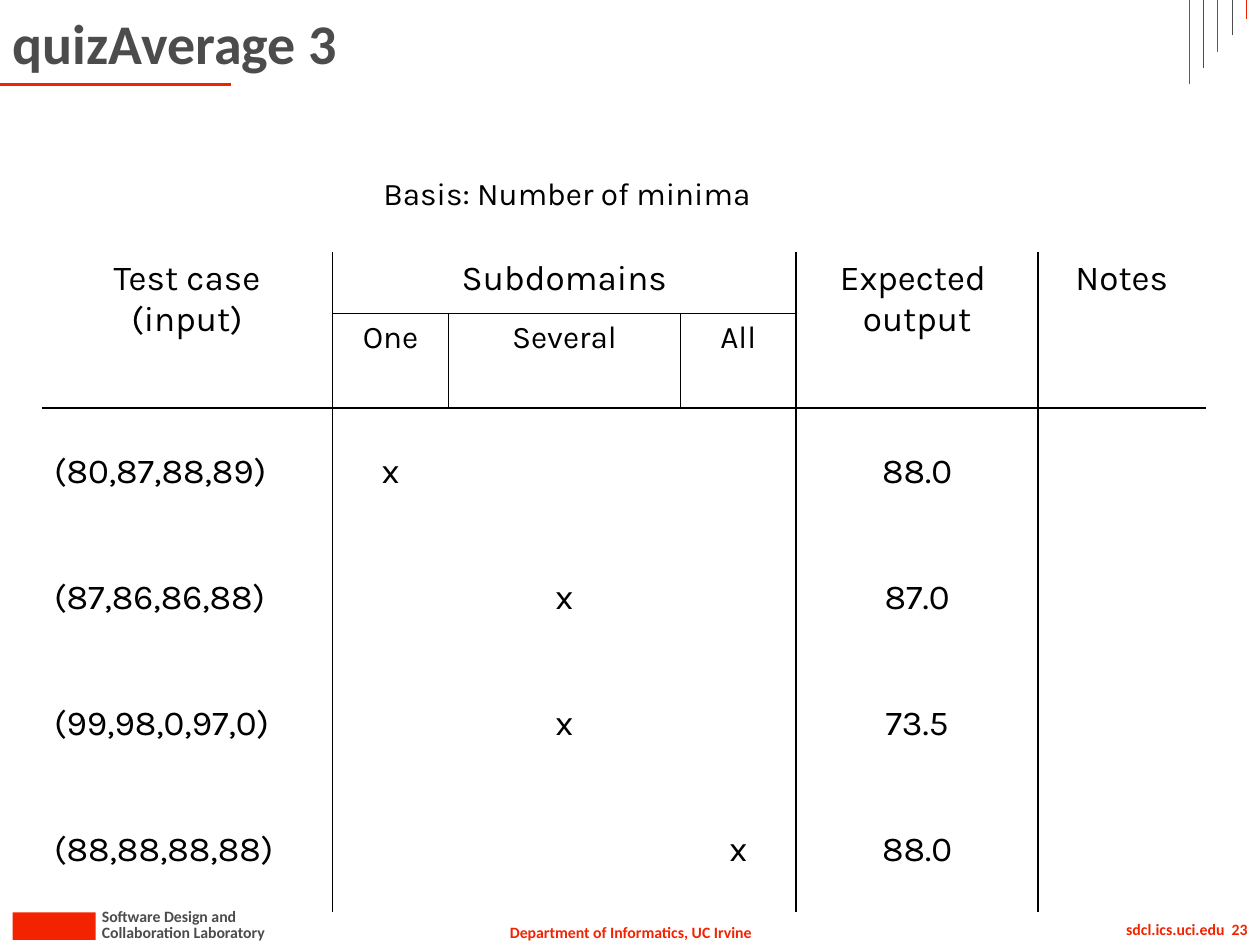
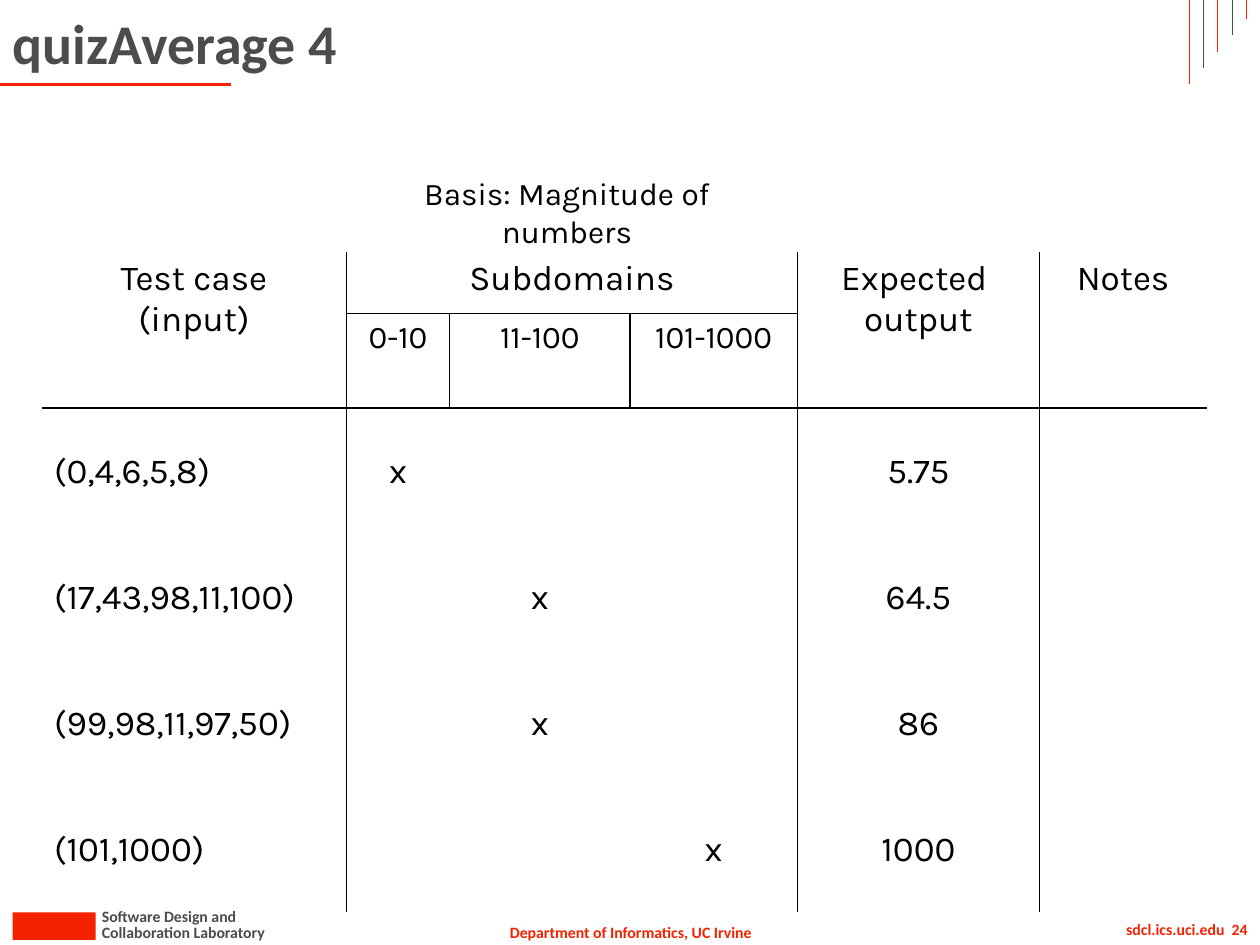
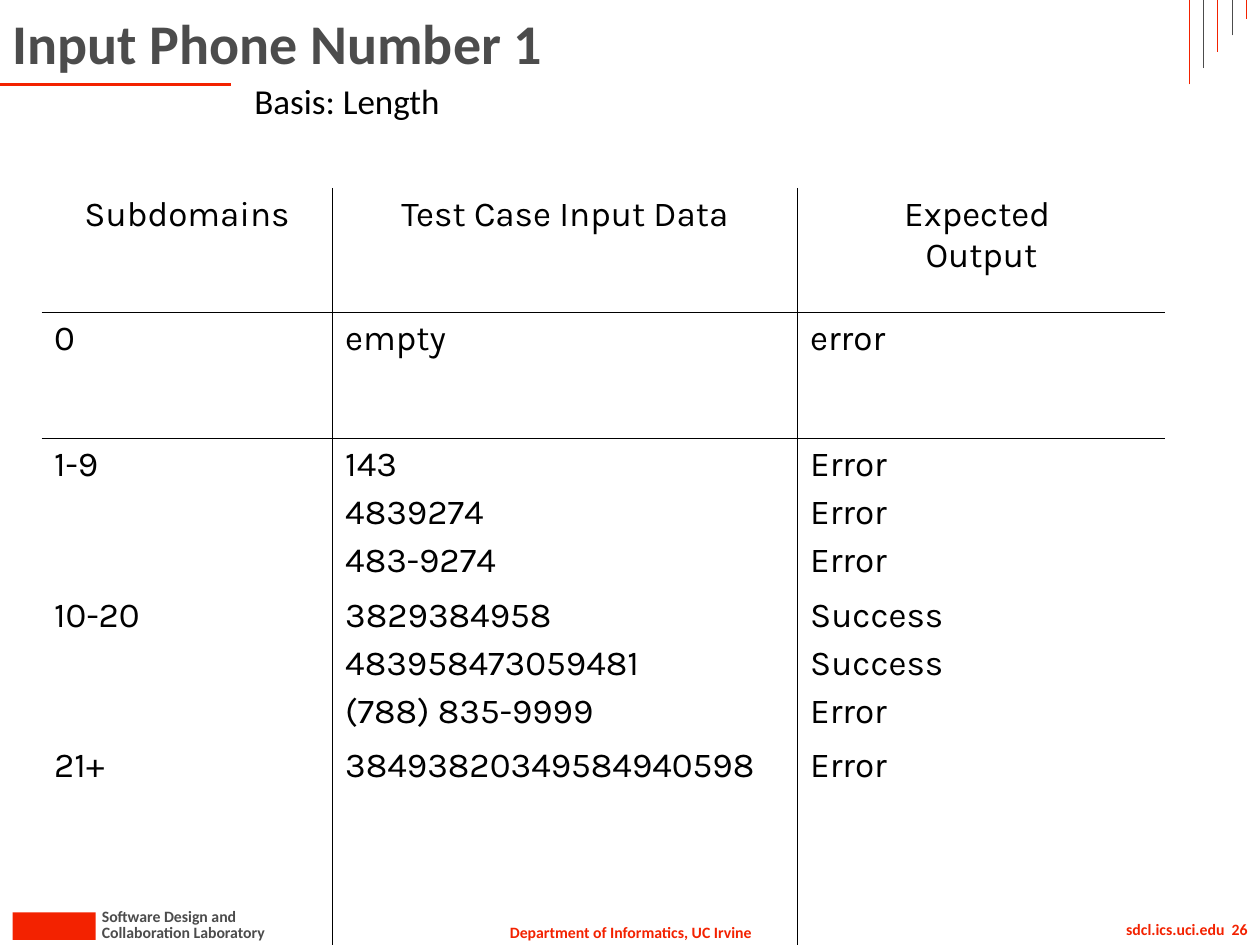
from lxml.etree import SubElement
from pptx import Presentation
from pptx.dml.color import RGBColor
from pptx.enum.shapes import MSO_CONNECTOR, MSO_SHAPE
from pptx.enum.text import MSO_ANCHOR, MSO_AUTO_SIZE, PP_ALIGN
from pptx.oxml.ns import qn
from pptx.util import Inches, Pt

RED, GRAY, BLACK = "F32200", "4C4C4C", "000000"
HEAD_FONT, BODY_FONT = "Calibri", "Karla"
NO_GRID_STYLE = "{2D5ABB26-0587-4C30-8999-92F81FD0307C}"
LEFT, CENTER, RIGHT = PP_ALIGN.LEFT, PP_ALIGN.CENTER, PP_ALIGN.RIGHT

FOOTERS = [
    ("Department of Informatics, UC Irvine", (3.93, 7.27, 2.15, 0.25), RED, CENTER, False),
    ("Collaboration Laboratory", (0.71, 7.27, 1.53, 0.25), GRAY, LEFT, False),
    ("Software Design and", (0.71, 7.15, 1.29, 0.25), GRAY, LEFT, False),
    ("sdcl.ics.uci.edu  {}", (7.84, 7.25, 2.16, 0.25), RED, RIGHT, True),
]
FOOTER_BLOCK = (0.1, 7.24, 0.66, 0.22)
CORNER_LINES = 5

AVERAGE_SLIDES = [
    {
        "title": "quizAverage 3",
        "number": 23,
        "basis": "Basis: Number of minima",
        "basis_box": (2.81, 1.33, 3.38, 0.4),
        "widths": [2.31, 0.92, 1.84, 0.92, 1.92, 1.33],
        "subdomains": ["One", "Several", "All"],
        "cases": [
            ("(80,87,88,89)", "One", "88.0"),
            ("(87,86,86,88)", "Several", "87.0"),
            ("(99,98,0,97,0)", "Several", "73.5"),
            ("(88,88,88,88)", "All", "88.0"),
        ],
    },
    {
        "title": "quizAverage 4",
        "number": 24,
        "basis": "Basis: Magnitude of numbers",
        "basis_box": (2.74, 1.33, 3.52, 0.4),
        "widths": [2.42, 0.82, 1.43, 1.33, 1.92, 1.33],
        "subdomains": ["0-10", "11-100", "101-1000"],
        "cases": [
            ("(0,4,6,5,8)", "0-10", "5.75"),
            ("(17,43,98,11,100)", "11-100", "64.5"),
            ("(99,98,11,97,50)", "11-100", "86"),
            ("(101,1000)", "101-1000", "1000"),
        ],
    },
]

PHONE_HEADERS = ["Subdomains", "Test Case Input Data", "Expected \vOutput"]
PHONE_ROWS = [
    ("0", ["empty"], ["error"]),
    ("1-9", ["143", "4839274", "483-9274"], ["Error", "Error", "Error"]),
    ("10-20", ["3829384958", "483958473059481", "(788) 835-9999"],
     ["Success", "Success", "Error"]),
    ("21+", ["38493820349584940598"], ["Error"]),
    ("", [], []),
    ("", [], []),
]


def rgb(color):
    return RGBColor.from_string(color)


def inches(box):
    return [Inches(v) for v in box]


def style(p, size, font, color=BLACK, align=LEFT, bold=False):
    p.alignment = align
    p.font.size = Pt(size)
    p.font.name = font
    p.font.bold = bold
    p.font.color.rgb = rgb(color)


def add_text(s, text, box, size, font, color=BLACK, align=LEFT, bold=False, wrap=True):
    tf = s.shapes.add_textbox(*inches(box)).text_frame
    tf.word_wrap = wrap
    tf.paragraphs[0].text = text
    style(tf.paragraphs[0], size, font, color, align, bold)


def add_line(s, x1, y1, x2, y2, color, width):
    line = s.shapes.add_connector(MSO_CONNECTOR.STRAIGHT, *inches((x1, y1, x2, y2)))
    line.line.color.rgb = rgb(color)
    line.line.width = Pt(width)
    SubElement(line._element.spPr, qn("a:effectLst"))


def add_slide(prs, title, number):
    s = prs.slides.add_slide(prs.slide_layouts[5])
    block = s.shapes.add_shape(MSO_SHAPE.RECTANGLE, *inches(FOOTER_BLOCK))
    block.shadow.inherit = False
    block.fill.solid()
    block.fill.fore_color.rgb = rgb(RED)
    block.line.fill.background()
    for text, box, color, align, wrap in FOOTERS:
        add_text(s, text.format(number), box, 9, HEAD_FONT, color, align, True, wrap)
    add_line(s, 0, 0.67, 1.83, 0.67, RED, 1.5)
    for i in range(CORNER_LINES):
        x = round(9.44 + 0.1125 * i, 2)
        add_line(s, x, 0.67 - 0.13 * i, x, 0, GRAY if i % 2 else RED, 0.5)

    sp = s.shapes.title
    sp.left, sp.top, sp.width, sp.height = inches((0, 0, 9, 0.67))
    tf = sp.text_frame
    tf.auto_size = MSO_AUTO_SIZE.NONE
    tf.vertical_anchor = MSO_ANCHOR.MIDDLE
    tf.text = title
    style(tf.paragraphs[0], 32, HEAD_FONT, GRAY, bold=True)
    return s


def add_grid(s, left, top, widths, heights, verticals, horizontals):
    box = (left, top, sum(widths), sum(heights))
    table = s.shapes.add_table(len(heights), len(widths), *inches(box)).table
    table.first_row = table.horz_banding = False
    table._tbl.tblPr[0].text = NO_GRID_STYLE
    for column, width in zip(table.columns, widths):
        column.width = Inches(width)
    for row, height in zip(table.rows, heights):
        row.height = Inches(height)
    for r in range(len(heights)):
        for c in range(len(widths)):
            cell = table.cell(r, c)
            cell.margin_bottom = Inches(0.03)
            sides = {
                "L": r in verticals.get(c, ()),
                "R": r in verticals.get(c + 1, ()),
                "T": c in horizontals.get(r, ()),
                "B": c in horizontals.get(r + 1, ()),
            }
            tcPr = cell._tc.get_or_add_tcPr()
            for side, ruled in sides.items():
                ln = SubElement(tcPr, qn("a:ln" + side), w=str(Pt(1)))
                if ruled:
                    fill = SubElement(ln, qn("a:solidFill"))
                    SubElement(fill, qn("a:srgbClr"), val=BLACK)
                else:
                    SubElement(ln, qn("a:noFill"))
            cell.fill.background()
    return table


def fill_cell(cell, lines, align=LEFT, size=20, anchor=MSO_ANCHOR.TOP):
    cell.vertical_anchor = anchor
    tf = cell.text_frame
    for i, line in enumerate(lines):
        p = tf.add_paragraph() if i else tf.paragraphs[0]
        p.text = line
        style(p, size, BODY_FONT, align=align)
        if i:
            p.space_before = Pt(4)


def add_average_slide(prs, data):
    s = add_slide(prs, data["title"], data["number"])
    rows, inner = range(6), range(1, 4)
    verticals = {1: rows, 2: [1], 3: [1], 4: rows, 5: rows}
    table = add_grid(s, 0.33, 2, data["widths"], [0.49] * 2 + [1] * 4,
                     verticals, {1: inner, 2: range(6)})
    for c in (0, 4, 5):
        table.cell(0, c).merge(table.cell(1, c))
    table.cell(0, 1).merge(table.cell(0, 3))

    headers = {0: "Test case\v(input)", 1: "Subdomains", 4: "Expected \voutput", 5: "Notes"}
    for c, text in headers.items():
        fill_cell(table.cell(0, c), [text], CENTER)
    for c, name in zip(inner, data["subdomains"]):
        fill_cell(table.cell(1, c), [name], CENTER, 18)
    for r, (case, subdomain, output) in enumerate(data["cases"], 2):
        mark = 1 + data["subdomains"].index(subdomain)
        for c, text, align in ((0, case, LEFT), (mark, "x", CENTER), (4, output, CENTER)):
            fill_cell(table.cell(r, c), [text], align, anchor=MSO_ANCHOR.MIDDLE)
    add_text(s, data["basis"], data["basis_box"], 18, BODY_FONT, align=CENTER)


def add_phone_slide(prs):
    s = add_slide(prs, "Input Phone Number 1", 26)
    rows, columns = range(7), range(3)
    table = add_grid(s, 0.33, 1.49, [2.31, 3.69, 2.92], [0.99] + [1] * 6,
                     {1: rows, 2: rows}, {1: columns, 2: columns})
    for c, text in enumerate(PHONE_HEADERS):
        fill_cell(table.cell(0, c), [text], CENTER)
    for r, (subdomain, inputs, outputs) in enumerate(PHONE_ROWS, 1):
        for c, lines in enumerate(([subdomain], inputs, outputs)):
            fill_cell(table.cell(r, c), lines)
    add_text(s, "Basis: Length", (1.92, 0.58, 2.92, 0.44), 20, HEAD_FONT)


def main():
    prs = Presentation()
    prs.slide_width, prs.slide_height = Inches(10), Inches(7.5)
    for data in AVERAGE_SLIDES:
        add_average_slide(prs, data)
    add_phone_slide(prs)
    prs.save("out.pptx")


if __name__ == "__main__":
    main()
